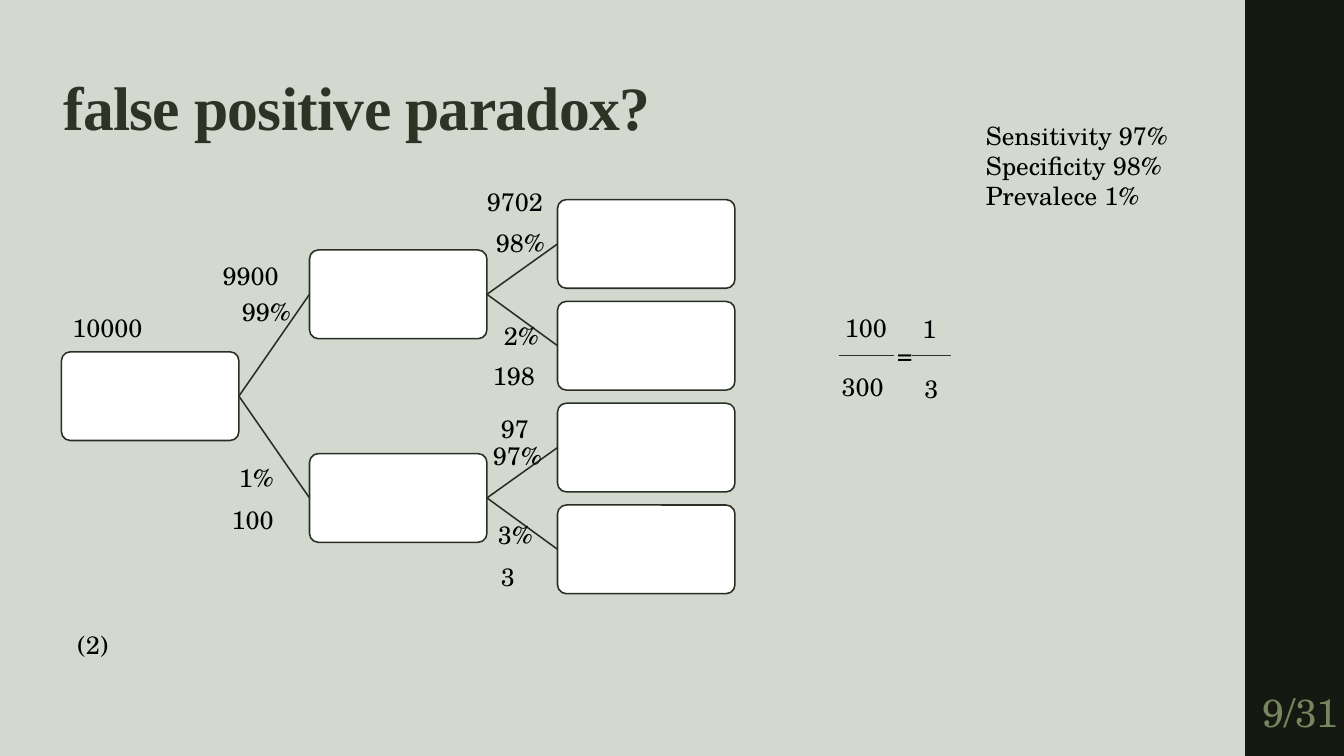
from lxml import etree
from pptx import Presentation
from pptx.dml.color import RGBColor
from pptx.enum.shapes import MSO_CONNECTOR, MSO_SHAPE
from pptx.enum.text import MSO_ANCHOR, PP_ALIGN
from pptx.oxml.ns import qn
from pptx.util import Pt

PX = 9144  # EMU per px, 100 px to the inch
BACKGROUND = RGBColor(0xD4, 0xD9, 0xCF)
SIDEBAR = RGBColor(0x16, 0x19, 0x12)
TITLE = RGBColor(0x2D, 0x34, 0x25)
OUTLINE = RGBColor(0x29, 0x2F, 0x22)
PAGE = RGBColor(0x76, 0x86, 0x60)
WHITE = RGBColor(0xFF, 0xFF, 0xFF)
BLACK = RGBColor(0, 0, 0)
BODY_FONT = "TeX Gyre Schola"
TITLE_FONT = "Times New Roman"
RECT, ROUNDED = MSO_SHAPE.RECTANGLE, MSO_SHAPE.ROUNDED_RECTANGLE
STRAIGHT = MSO_CONNECTOR.STRAIGHT
TOP, MIDDLE, BOTTOM = MSO_ANCHOR.TOP, MSO_ANCHOR.MIDDLE, MSO_ANCHOR.BOTTOM
LEFT, CENTER = PP_ALIGN.LEFT, PP_ALIGN.CENTER
LEFT_SIDE, RIGHT_SIDE = 1, 3


class SlideBuilder:
    def __init__(self, slide):
        self.slide = slide
        fill = slide.background.fill
        fill.solid()
        fill.fore_color.rgb = BACKGROUND

    def box(self, left, top, width, height, kind, color, outline=None):
        shape = self.slide.shapes.add_shape(
            kind, left * PX, top * PX, width * PX, height * PX)
        shape.shadow.inherit = False
        shape.fill.solid()
        shape.fill.fore_color.rgb = color
        if outline is None:
            shape.line.fill.background()
        else:
            shape.line.color.rgb = outline
            shape.line.width = Pt(1.1)
        return shape

    def line(self, x1, y1, x2, y2, color, width):
        connector = self.slide.shapes.add_connector(
            STRAIGHT, x1 * PX, y1 * PX, x2 * PX, y2 * PX)
        connector.line.color.rgb = color
        connector.line.width = Pt(width)
        etree.SubElement(connector._element.spPr, qn("a:effectLst"))
        return connector

    def branch(self, parent, child):
        connector = self.line(0, 0, 1, 1, OUTLINE, 1.1)
        connector.begin_connect(parent, RIGHT_SIDE)
        connector.end_connect(child, LEFT_SIDE)

    def text(self, left, top, width, height, lines, size=18, color=BLACK,
             font=BODY_FONT, bold=False, anchor=TOP, align=LEFT,
             insets=(10, 5, 10, 5), spacing=None):
        frame = self.slide.shapes.add_textbox(
            left * PX, top * PX, width * PX, height * PX).text_frame
        frame.word_wrap = True
        frame.vertical_anchor = anchor
        (frame.margin_left, frame.margin_top,
         frame.margin_right, frame.margin_bottom) = [i * PX for i in insets]
        frame.text = lines
        for paragraph in frame.paragraphs:
            paragraph.alignment = align
            paragraph.line_spacing = spacing
            paragraph.font.size = Pt(size)
            paragraph.font.name = font
            paragraph.font.bold = bold
            paragraph.font.color.rgb = color
        return frame


def main():
    prs = Presentation()
    prs.slide_width, prs.slide_height = 1333 * PX, 750 * PX
    page = SlideBuilder(prs.slides.add_slide(prs.slide_layouts[6]))

    # Sidebar and title
    page.box(1235, 0, 98, 750, RECT, SIDEBAR)
    title = page.text(53, 0, 1145, 148, "false positive paradox?", 44, TITLE,
                      TITLE_FONT, True, BOTTOM, insets=(10, 3, 10, 5),
                      spacing=0.9)
    title.paragraphs[0].runs[0].font._element.set("spc", "-50")

    # Probability tree: each parent sits midway between its two children
    def node(column, top):
        shape = page.box(61 + 246 * column, top, 176, 88, ROUNDED, WHITE, OUTLINE)
        shape.adjustments[0] = 0.1
        return shape

    leaf_tops = [198 + 101 * i for i in range(4)]
    group_tops = [sum(leaf_tops[i:i + 2]) // 2 for i in (0, 2)]
    root = node(0, sum(group_tops) // 2)
    groups = [node(1, top) for top in group_tops]
    for group in groups:
        page.branch(root, group)
    for i, top in enumerate(leaf_tops):
        page.branch(groups[i // 2], node(2, top))

    # Test characteristics
    page.text(968, 114, 210, 101,
              "Sensitivity 97%\nSpecificity 98%\nPrevalece 1%")

    # Branch rates, counts, fraction parts and reference
    labels = [
        (230, 289, 71, "99%"), (227, 454, 71, "1%"),
        (479, 432, 71, "97%"), (490, 313, 71, "2%"),
        (482, 221, 71, "98%"), (484, 510, 71, "3%"),
        (62, 305, 90, "10000"), (220, 495, 90, "100"),
        (211, 253, 90, "9900"), (473, 180, 90, "9702"),
        (479, 353, 64, "198"), (487, 405, 53, "97"), (487, 552, 33, "3"),
        (828, 305, 68, "100"), (825, 363, 76, "300"),
        (905, 306, 39, "1"), (907, 365, 34, "3"), (880, 332, 25, "="),
        (67, 619, 54, "(2)"),
    ]
    for left, top, width, label in labels:
        page.text(left, top, width, 40, label)

    # Fraction bars
    for start, end in ((832, 887), (905, 943)):
        page.line(start, 353, end, 353, TITLE, 0.75)

    # Page number
    page.text(1247, 665, 86, 82, "9/31", 28, PAGE, anchor=MIDDLE,
              align=CENTER, insets=(0, 5, 0, 5))

    prs.save("out.pptx")


if __name__ == "__main__":
    main()
